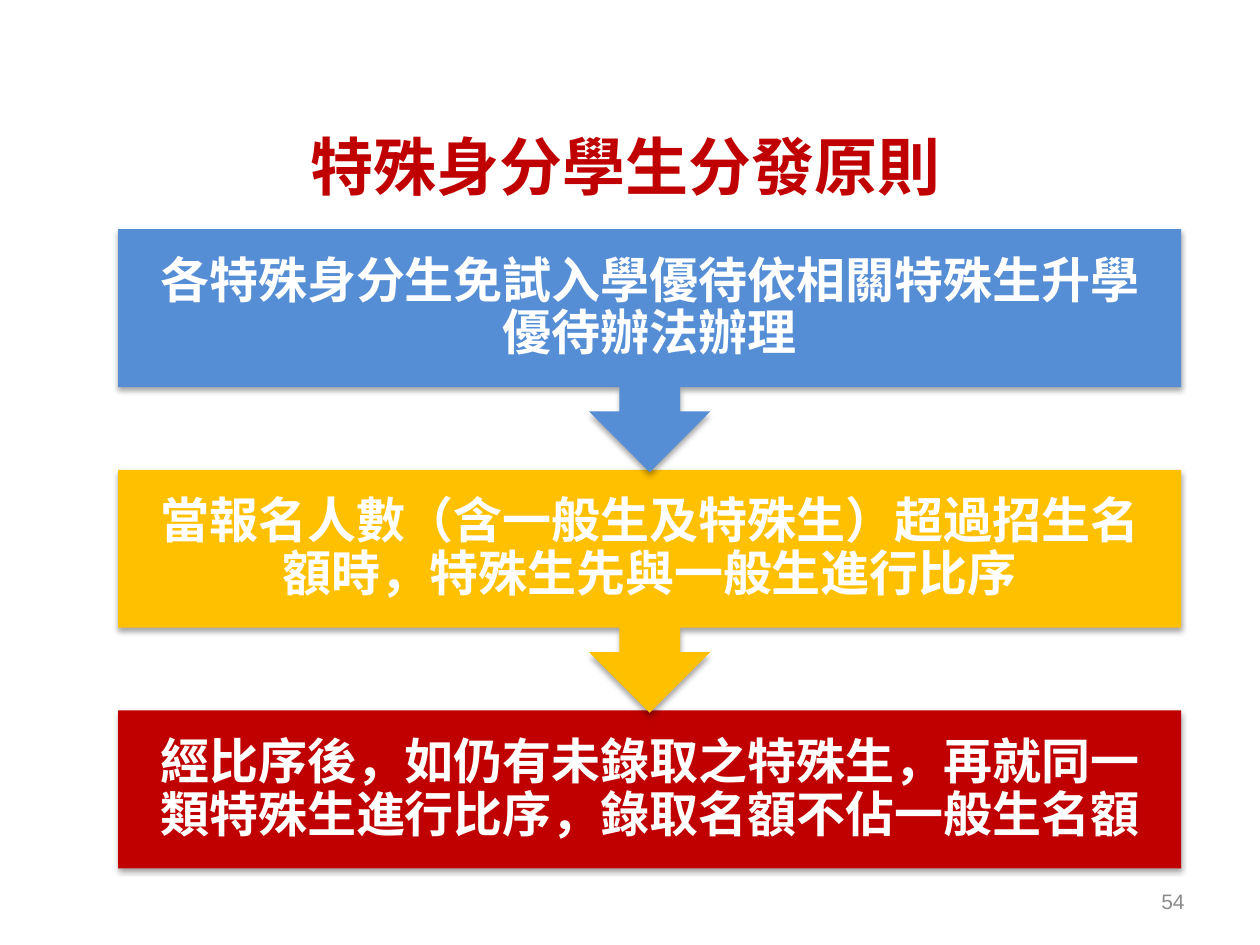
import pptx
import pptx.dml.color
import pptx.enum.shapes
import pptx.enum.text
import pptx.oxml
import pptx.oxml.ns
import pptx.util
from lxml import etree

Pt = pptx.util.Pt
SHAPES = pptx.enum.shapes.MSO_SHAPE
ALIGN = pptx.enum.text.PP_ALIGN
MIDDLE = pptx.enum.text.MSO_ANCHOR.MIDDLE

CJK_FONT = "Noto Sans CJK SC"
COLOURS = {
    "red": "C00000",
    "amber": "FFC000",
    "blue": "558ED5",
    "white": "FFFFFF",
    "grey": "8C8C8C",
}

# Steps from top to bottom: text and fill
STEPS = [
    ("各特殊身分生免試入學優待依相關特殊生升學優待辦法辦理", "blue"),
    ("當報名人數（含一般生及特殊生）超過招生名額時，特殊生先與一般生進行比序", "amber"),
    ("經比序後，如仍有未錄取之特殊生，再就同一類特殊生進行比序，錄取名額不佔一般生名額", "red"),
]
STEP_LEFT, STEP_TOP, STEP_WIDTH = 67.5, 131, 607.5
STEP_PITCH, BOX_HEIGHT, CALLOUT_HEIGHT = 137.5, 90.2, 138.8

SHADOW = (
    f'<a:effectLst {pptx.oxml.ns.nsdecls("a")}>'
    '<a:outerShdw blurRad="40000" dist="23000" dir="5400000" rotWithShape="0">'
    '<a:srgbClr val="000000"><a:alpha val="35000"/></a:srgbClr>'
    "</a:outerShdw></a:effectLst>"
)


def colour(name):
    return pptx.dml.color.RGBColor.from_string(COLOURS[name])


def write(frame, text, size, tint, font=CJK_FONT, bold=True, align=ALIGN.CENTER):
    """Put one formatted run in a text frame and return its paragraph."""
    frame.word_wrap = True
    frame.vertical_anchor = MIDDLE
    para = frame.paragraphs[0]
    para.alignment = align
    span = para.add_run()
    span.text = text
    span.font.size = Pt(size)
    span.font.bold = bold
    span.font.name = font
    span.font.color.rgb = colour(tint)
    # East Asian characters need their own typeface entry
    latin = span.font._element.find(pptx.oxml.ns.qn("a:latin"))
    east_asian = etree.Element(pptx.oxml.ns.qn("a:ea"), typeface=font)
    latin.addnext(east_asian)
    return para


def add_title(page, text):
    title = page.shapes.title
    title.left, title.top, title.width, title.height = Pt(86.4), Pt(54.7), Pt(542), Pt(79)
    write(title.text_frame, text, 36, "red")


def add_step(page, index, text, fill):
    """Add one step; all but the last point down to the next."""
    is_last = index == len(STEPS) - 1
    kind = SHAPES.RECTANGLE if is_last else SHAPES.DOWN_ARROW_CALLOUT
    height = BOX_HEIGHT if is_last else CALLOUT_HEIGHT
    box = page.shapes.add_shape(
        kind, Pt(STEP_LEFT), Pt(STEP_TOP + index * STEP_PITCH), Pt(STEP_WIDTH), Pt(height)
    )
    box.fill.solid()
    box.fill.fore_color.rgb = colour(fill)
    box.line.fill.background()
    box._element.spPr.append(pptx.oxml.parse_xml(SHADOW))

    frame = box.text_frame
    frame.margin_left = frame.margin_right = Pt(16)
    frame.margin_top = frame.margin_bottom = Pt(16)
    para = write(frame, text, 28, "white")
    para.line_spacing = Pt(30)


def add_page_number(page, number):
    box = page.shapes.add_textbox(Pt(516), Pt(500.5), Pt(168), Pt(28.8))
    write(box.text_frame, number, 12, "grey", "Arial", False, ALIGN.RIGHT)


def main():
    deck = pptx.Presentation()
    deck.slide_width, deck.slide_height = Pt(720), Pt(540)
    page = deck.slides.add_slide(deck.slide_layouts.get_by_name("Title Only"))

    add_title(page, "特殊身分學生分發原則")
    add_page_number(page, "54")

    # Last step first, so that each arrow tip lies over the box below it
    for index, (text, fill) in reversed(list(enumerate(STEPS))):
        add_step(page, index, text, fill)

    deck.save("out.pptx")


if __name__ == "__main__":
    main()
